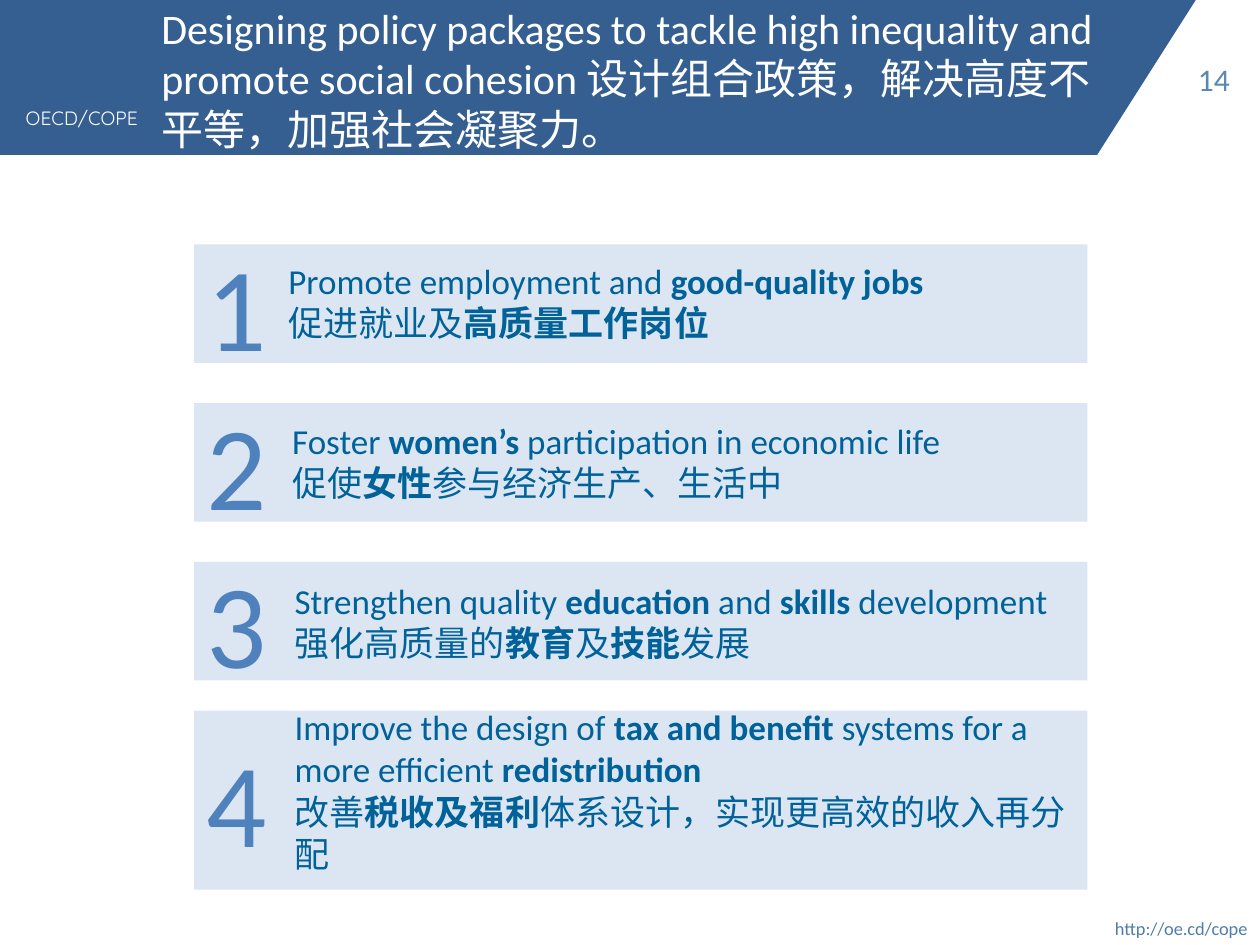
from pptx import Presentation
from pptx.dml.color import RGBColor
from pptx.enum.shapes import MSO_SHAPE as Shape
from pptx.enum.text import MSO_ANCHOR as Anchor, MSO_AUTO_SIZE as AutoSize, PP_ALIGN as Align
from pptx.util import Inches, Pt

COLORS = {
    "banner": "365F91", "white": "FFFFFF", "card": "DCE6F2", "number": "4F81BD",
    "body": "006299", "link": "4F7DA7", "page": "5B88B1",
}
TITLE = ("Designing policy packages to tackle high inequality and promote social cohesion "
         "设计组合政策，解决高度不平等，加强社会凝聚力。")
POLICIES = [
    ("Promote employment and **good-quality jobs**", "促进就业及**高质量工作岗位**"),
    ("Foster **women’s** participation in economic life", "促使**女性**参与经济生产、生活中"),
    ("Strengthen quality **education** and **skills **development",
     "强化高质量的**教育**及**技能**发展"),
    ("Improve the design of **tax and benefit **systems for a more efficient **redistribution**",
     "改善**税收及福利**体系设计，实现更高效的收入再分配"),
]
BANNERS = [((0, 0, 4.7, 1.23), 0), ((0.01, 0, 9.48, 1.23), 0.637)]
LABELS = [
    ("OECD/COPE", (0.02, 0.79, 1.26, 0.29),
     dict(size=11, color="white", font="Quicksand", align=Align.CENTER)),
    ("http://oe.cd/cope", (7.9, 7.23, 2.1, 0.26),
     dict(size=10.5, color="link", align=Align.RIGHT)),
    ("14", (9.41, 0.43, 0.5, 0.4), dict(size=18, color="page", wrap=False)),
]
CARD_LEFT, CARD_WIDTH, CARD_HEIGHT = 1.54, 7.09, 0.94
FIRST_TOP, PITCH = 1.94, 1.26
LAST_TOP, LAST_HEIGHT = 5.64, 1.42
TEXT_LEFTS = [2.19, 2.22, 2.24, 2.24]
TEXT_TOPS = [1.92, 3.19, 4.46, 5.8]
TEXT_WIDTH = 6.38


def color(name):
    return RGBColor.from_string(COLORS[name])


def inches(box):
    return [Inches(value) for value in box]


def write(shape, *lines, size, color_name=None, color="white", font="Calibri",
          align=Align.LEFT, anchor=Anchor.TOP, wrap=True):
    frame = shape.text_frame
    frame.auto_size = AutoSize.NONE
    frame.word_wrap = wrap
    frame.vertical_anchor = anchor
    for index, line in enumerate(lines):
        paragraph = frame.add_paragraph() if index else frame.paragraphs[0]
        paragraph.alignment = align
        for position, part in enumerate(line.split("**")):
            if part:
                run = paragraph.add_run()
                run.text = part
                run.font.name = font
                run.font.size = Pt(size)
                run.font.bold = position % 2 == 1
                run.font.color.rgb = RGBColor.from_string(COLORS[color])


def add_block(slide, kind, box, fill):
    shape = slide.shapes.add_shape(kind, *inches(box))
    shape.shadow.inherit = False
    shape.fill.solid()
    shape.fill.fore_color.rgb = color(fill)
    shape.line.fill.background()
    return shape


def add_label(slide, box, *lines, **style):
    write(slide.shapes.add_textbox(*inches(box)), *lines, **style)


def main():
    presentation = Presentation()
    presentation.slide_width, presentation.slide_height = Inches(10), Inches(7.5)
    slide = presentation.slides.add_slide(presentation.slide_layouts[5])

    for box, slant in BANNERS:
        banner = add_block(slide, Shape.TRAPEZOID, box, "banner")
        banner.rotation = 180
        banner.adjustments[0] = slant
    for text, box, style in LABELS:
        add_label(slide, box, text, **style)

    title = slide.shapes.title
    banner.element.addnext(title.element)
    title.left, title.top, title.width, title.height = inches((1.18, -0.07, 7.76, 1.38))
    write(title, TITLE, size=24, anchor=Anchor.MIDDLE)

    for index, lines in enumerate(POLICIES):
        last = index == len(POLICIES) - 1
        top = LAST_TOP if last else FIRST_TOP + index * PITCH
        height = LAST_HEIGHT if last else CARD_HEIGHT
        card = add_block(slide, Shape.RECTANGLE, (CARD_LEFT, top, CARD_WIDTH, height), "card")
        write(card, str(index + 1), size=68, color="number", anchor=Anchor.MIDDLE)
        add_label(slide, (TEXT_LEFTS[index], TEXT_TOPS[index], TEXT_WIDTH, CARD_HEIGHT),
                  *lines, size=20, color="body", anchor=Anchor.MIDDLE)

    presentation.save("out.pptx")


if __name__ == "__main__":
    main()
